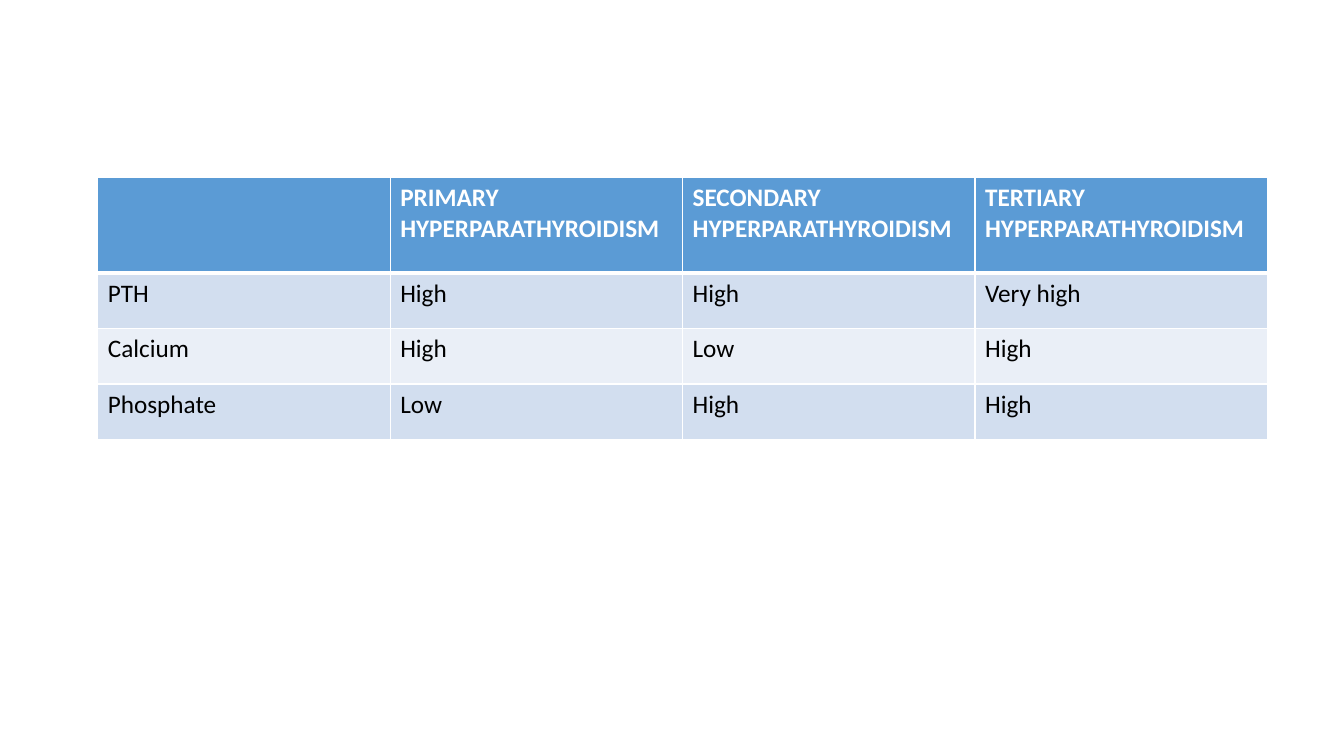
from dataclasses import dataclass

from lxml import etree
from pptx import Presentation
from pptx.dml.color import RGBColor
from pptx.oxml import ns
from pptx.util import Inches, Pt


@dataclass(frozen=True)
class Theme:
    font: str = "Calibri"
    size: int = 18
    header: str = "5B9BD5"
    bands: tuple = ("D2DEEF", "EAEFF7")
    header_text: str = "FFFFFF"
    body_text: str = "000000"
    border: str = "FFFFFF"
    thin: int = 1
    thick: int = 3


THEME = Theme()
COLUMN_WIDTH = 2.9
HEADER_HEIGHT, BODY_HEIGHT = 0.95, 0.55
LAB_FINDINGS = [
    ["", "PRIMARY HYPERPARATHYROIDISM", "SECONDARY HYPERPARATHYROIDISM",
     "TERTIARY HYPERPARATHYROIDISM"],
    ["PTH", "High", "High", "Very high"],
    ["Calcium", "High", "Low", "High"],
    ["Phosphate", "Low", "High", "High"],
]


def add_borders(cell, row):
    """Draw all four sides, thick on the edge between header and body."""
    tc_pr = cell._tc.get_or_add_tcPr()
    thick_side = {0: "B", 1: "T"}.get(row)
    for side in "LRTB":
        width = THEME.thick if side == thick_side else THEME.thin
        ln = etree.SubElement(tc_pr, ns.qn(f"a:ln{side}"), w=str(Pt(width)))
        fill = etree.SubElement(ln, ns.qn("a:solidFill"))
        etree.SubElement(fill, ns.qn("a:srgbClr"), val=THEME.border)


def format_cell(cell, row, content):
    is_header = row == 0
    add_borders(cell, row)
    fill = THEME.header if is_header else THEME.bands[(row - 1) % 2]
    cell.fill.solid()
    cell.fill.fore_color.rgb = RGBColor.from_string(fill)
    p = cell.text_frame.paragraphs[0]
    if content:
        p.add_run().text = content
    font = p.runs[0].font if content else p.font
    values = {"name": THEME.font, "size": Pt(THEME.size), "bold": is_header}
    for name, value in values.items():
        setattr(font, name, value)
    color = THEME.header_text if is_header else THEME.body_text
    font.color.rgb = RGBColor.from_string(color)


def add_findings_table(s, left, top, data):
    heights = [HEADER_HEIGHT] + [BODY_HEIGHT] * (len(data) - 1)
    columns = len(data[0])
    table = s.shapes.add_table(
        len(data), columns, Inches(left), Inches(top),
        Inches(COLUMN_WIDTH * columns), Inches(sum(heights))).table
    for column in table.columns:
        column.width = Inches(COLUMN_WIDTH)
    for i, (height, contents) in enumerate(zip(heights, data)):
        table.rows[i].height = Inches(height)
        for j, content in enumerate(contents):
            format_cell(table.cell(i, j), i, content)


def main():
    prs = Presentation()
    prs.slide_width, prs.slide_height = Inches(13.33), Inches(7.5)
    s = prs.slides.add_slide(prs.slide_layouts[6])
    add_findings_table(s, 0.97, 1.76, LAB_FINDINGS)
    prs.save("out.pptx")


if __name__ == "__main__":
    main()
